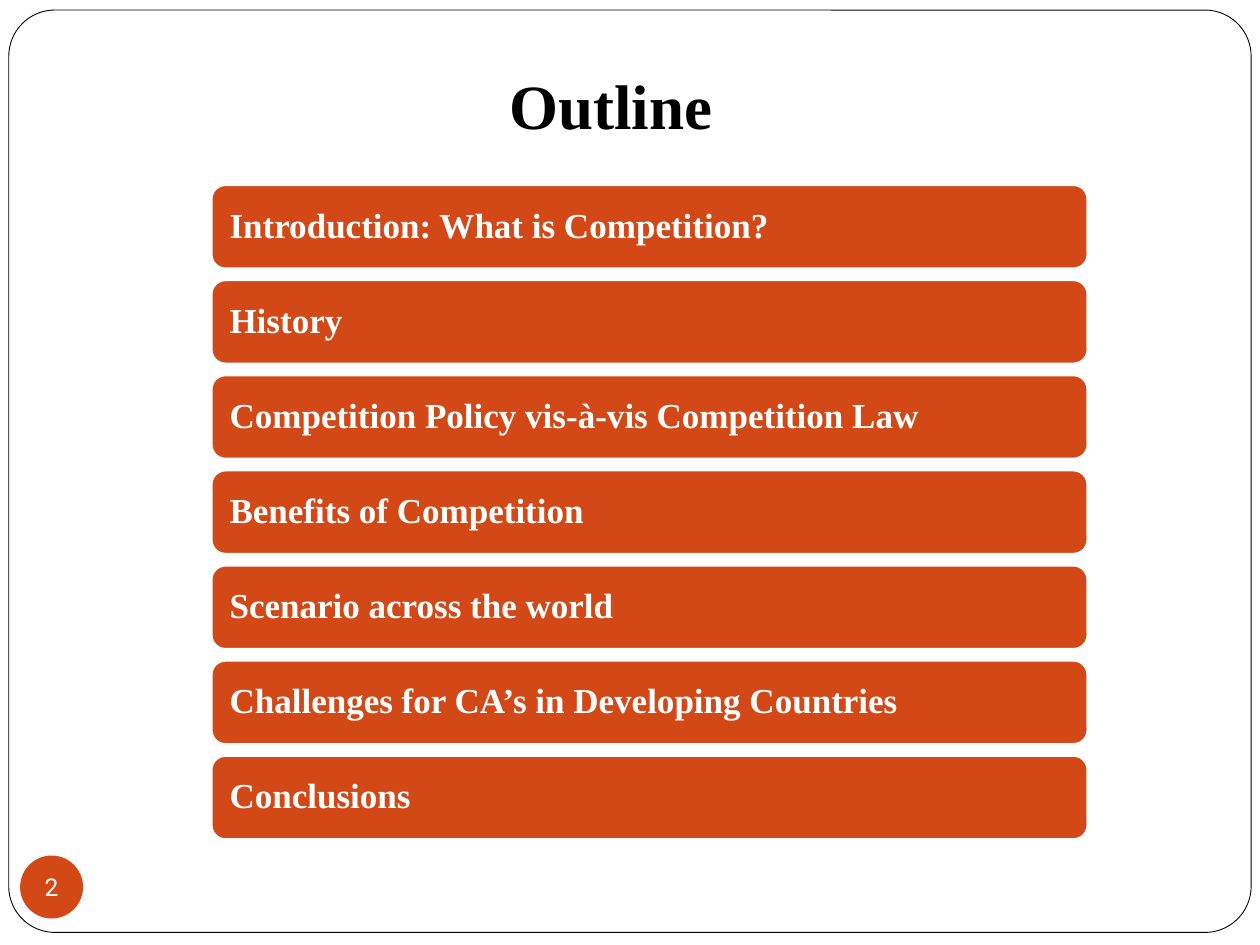
import pptx
import pptx.dml.color
import pptx.enum.shapes
import pptx.enum.text
import pptx.util
from dataclasses import dataclass

# The slide is a grid of 100 columns by 75 rows
COLUMNS, ROWS = 100, 75
CELL = pptx.util.Inches(0.1)

ORANGE, WHITE, BLACK = "D34817", "FFFFFF", "000000"
SERIF, SANS = "Times New Roman", "Roboto"
SHAPES = pptx.enum.shapes.MSO_SHAPE
ALIGN = pptx.enum.text.PP_ALIGN
ANCHOR = pptx.enum.text.MSO_ANCHOR

TOPICS = (
    "Introduction: What is Competition?",
    "History",
    "Competition Policy vis-à-vis Competition Law",
    "Benefits of Competition",
    "Scenario across the world",
    "Challenges for CA’s in Developing Countries",
    "Conclusions",
)
FIRST_TOP, LAST_TOP = 14.7, 60
PITCH = (LAST_TOP - FIRST_TOP) / (len(TOPICS) - 1)


@dataclass(frozen=True)
class Box:
    column: float
    row: float
    width: float
    height: float

    def lengths(self) -> list[int]:
        return [round(cells * CELL) for cells in
                (self.column, self.row, self.width, self.height)]


@dataclass(frozen=True)
class Lettering:
    font: str
    size: float
    color: str
    bold: bool
    align: ALIGN
    anchor: ANCHOR
    insets: tuple[float, float, float, float]  # left, top, right, bottom in cells
    wrap: bool = True
    line_spacing: float = 1.0


TITLE = Lettering(SERIF, 36, BLACK, True, ALIGN.CENTER, ANCHOR.BOTTOM, (1, 0.5, 1, 1))
TOPIC = Lettering(SERIF, 20, WHITE, True, ALIGN.LEFT, ANCHOR.MIDDLE,
                  (1.1, 1.1, 1.1, 1.1), line_spacing=0.9)
NUMBER = Lettering(SANS, 14, WHITE, False, ALIGN.CENTER, ANCHOR.MIDDLE,
                   (0, 0, 0, 0), wrap=False)


def rgb(color: str) -> pptx.dml.color.RGBColor:
    return pptx.dml.color.RGBColor.from_string(color)


def add_shape(slide, kind: SHAPES, box: Box, fill: str,
              line: str | None = None, line_width: float = 1):
    shape = slide.shapes.add_shape(kind, *box.lengths())
    shape.shadow.inherit = False
    shape.fill.solid()
    shape.fill.fore_color.rgb = rgb(fill)
    if line is None:
        shape.line.fill.background()
    else:
        shape.line.color.rgb = rgb(line)
        shape.line.width = pptx.util.Pt(line_width)
    return shape


def write(shape, text: str, style: Lettering) -> None:
    frame = shape.text_frame
    frame.word_wrap = style.wrap
    frame.vertical_anchor = style.anchor
    (frame.margin_left, frame.margin_top,
     frame.margin_right, frame.margin_bottom) = (
        round(inset * CELL) for inset in style.insets)
    paragraph = frame.paragraphs[0]
    paragraph.alignment = style.align
    paragraph.line_spacing = style.line_spacing
    run = paragraph.add_run()
    run.text = text
    run.font.name = style.font
    run.font.size = pptx.util.Pt(style.size)
    run.font.bold = style.bold
    run.font.color.rgb = rgb(style.color)


def main() -> None:
    presentation = pptx.Presentation()
    presentation.slide_width = COLUMNS * CELL
    presentation.slide_height = ROWS * CELL
    slide = presentation.slides.add_slide(presentation.slide_layouts[6])

    # Page frame
    frame = add_shape(slide, SHAPES.ROUNDED_RECTANGLE,
                      Box(0.7, 0.8, 98.6, 73.2), WHITE, BLACK, 0.5)
    frame.adjustments[0] = 0.05

    # Title
    title = slide.shapes.add_textbox(*Box(2, 2.8, 93, 9.5).lengths())
    write(title, "Outline", TITLE)

    # Slide number badge
    badge = add_shape(slide, SHAPES.OVAL, Box(1.6, 67.9, 5, 5), ORANGE)
    write(badge, "2", NUMBER)

    # Topic bars, evenly spaced
    for index, topic in enumerate(TOPICS):
        box = Box(16.8, FIRST_TOP + index * PITCH, 69.5, 6.6)
        bar = add_shape(slide, SHAPES.ROUNDED_RECTANGLE, box, ORANGE, WHITE)
        write(bar, topic, TOPIC)

    presentation.save("out.pptx")


if __name__ == "__main__":
    main()
